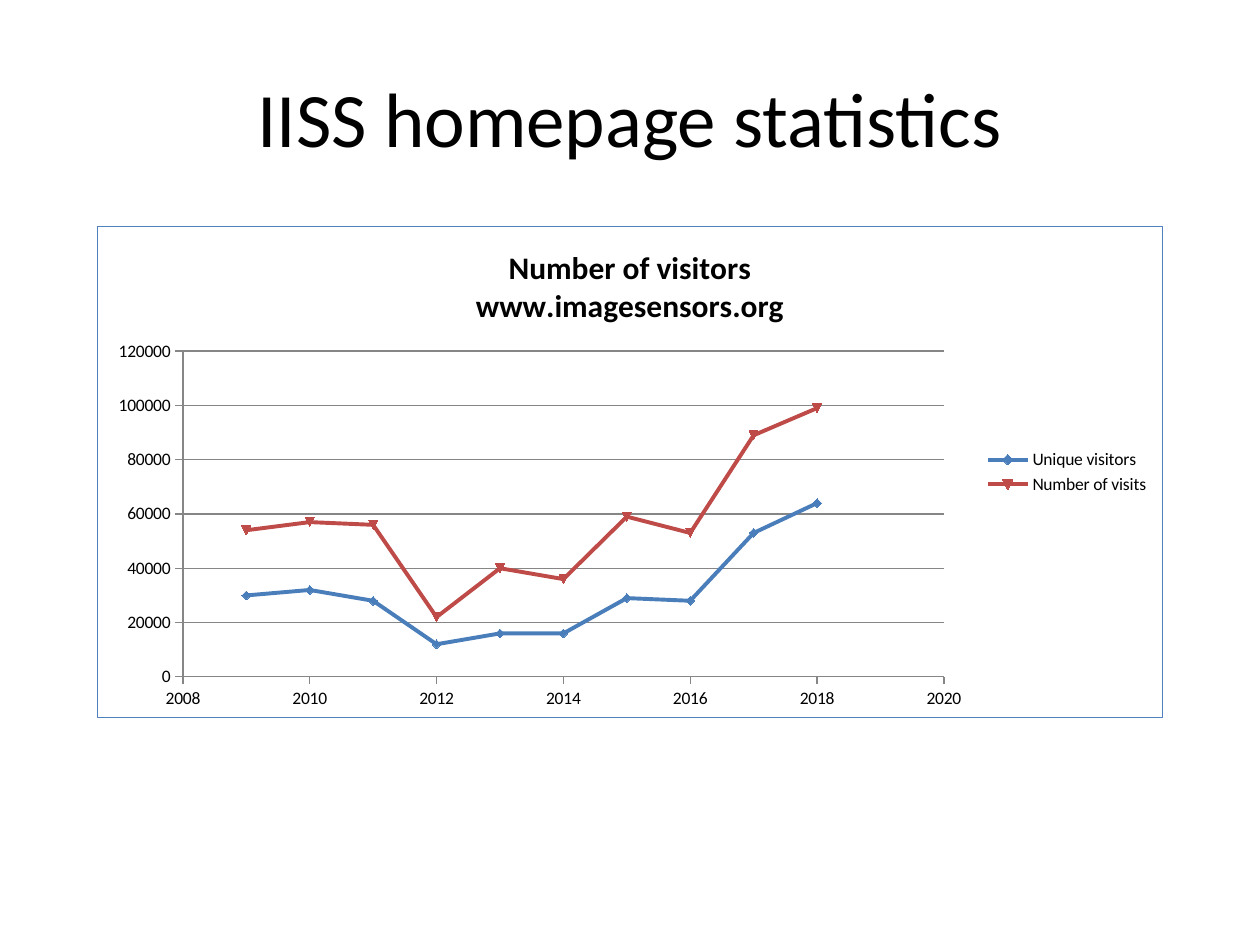
from pptx import Presentation
from pptx.chart.data import XyChartData
from pptx.dml.color import RGBColor
from pptx.enum.chart import XL_CHART_TYPE, XL_LEGEND_POSITION, XL_TICK_MARK
from pptx.enum.text import MSO_ANCHOR, PP_ALIGN
from pptx.oxml import parse_xml
from pptx.oxml.ns import nsdecls, qn
from pptx.util import Pt

SCATTER_LINES = XL_CHART_TYPE.XY_SCATTER_LINES
LEGEND_RIGHT = XL_LEGEND_POSITION.RIGHT
TICK_OUTSIDE = XL_TICK_MARK.OUTSIDE
MIDDLE = MSO_ANCHOR.MIDDLE
CENTER = PP_ALIGN.CENTER

BLACK = RGBColor(0x00, 0x00, 0x00)
GRAY = RGBColor(0x86, 0x86, 0x86)
BLUE = RGBColor(0x4F, 0x81, 0xBD)
LINE_BLUE = RGBColor(0x4A, 0x7E, 0xBB)
LINE_RED = RGBColor(0xBE, 0x4B, 0x48)
FONT = "Calibri"

YEARS = range(2009, 2019)
VISITOR_COUNTS = [
    ("Unique visitors", LINE_BLUE,
     [30000, 32000, 28000, 12000, 16000, 16000, 29000, 28000, 53000, 64000]),
    ("Number of visits", LINE_RED,
     [54000, 57000, 56000, 22000, 40000, 36000, 59000, 53000, 89000, 99000]),
]


def style_font(font, size, bold=False):
    font.name = FONT
    font.size = Pt(size)
    font.bold = bold
    font.color.rgb = BLACK


prs = Presentation()
prs.slide_width, prs.slide_height = Pt(720), Pt(540)
slide = prs.slides.add_slide(prs.slide_layouts[6])

# Heading
heading = slide.shapes.add_textbox(Pt(36), Pt(21.6), Pt(648), Pt(90)).text_frame
heading.word_wrap = True
heading.vertical_anchor = MIDDLE
heading.text = "IISS homepage statistics"
heading.paragraphs[0].alignment = CENTER
style_font(heading.paragraphs[0].runs[0].font, 44)

# Visitor chart
visitor_data = XyChartData()
for name, color, counts in VISITOR_COUNTS:
    points = visitor_data.add_series(name)
    for year, count in zip(YEARS, counts):
        points.add_data_point(year, count)
chart = slide.shapes.add_chart(SCATTER_LINES, Pt(55.5), Pt(129), Pt(609),
                               Pt(281.5), visitor_data).chart
style_font(chart.font, 10)

chart.has_title = True
chart_title = chart.chart_title.text_frame
chart_title.text = "Number of visitors\nwww.imagesensors.org"
for line in chart_title.paragraphs:
    style_font(line.runs[0].font, 18, bold=True)
chart.chart_title.include_in_layout = False

chart.has_legend = True
chart.legend.position = LEGEND_RIGHT
chart.legend.include_in_layout = False

# Axes
for axis, low, high, step in [(chart.category_axis, 2008, 2020, 2),
                              (chart.value_axis, 0, 120000, 20000)]:
    axis.minimum_scale, axis.maximum_scale, axis.major_unit = low, high, step
    axis.major_tick_mark = TICK_OUTSIDE
    axis.tick_labels.number_format = "General"
    axis.tick_labels.number_format_is_linked = False
    axis.format.line.color.rgb = GRAY
    axis.format.line.width = Pt(0.75)
chart.category_axis.has_major_gridlines = False
chart.value_axis.has_major_gridlines = True
gridline = chart.value_axis.major_gridlines.format.line
gridline.color.rgb = GRAY
gridline.width = Pt(0.75)

# Series lines; automatic markers follow the index: diamond, then triangle
chart.plots[0].vary_by_categories = False
for series, (name, color, counts) in zip(chart.plots[0].series, VISITOR_COUNTS):
    series.smooth = False
    series.format.line.color.rgb = color
    series.format.line.width = Pt(2.25)
for index, series_xml in enumerate(chart.element.iter(qn("c:ser")), start=1):
    series_xml.find(qn("c:idx")).set("val", str(index))

# Plot area position, as fractions of the chart
PLOT_LEFT, PLOT_TOP, PLOT_WIDTH, PLOT_HEIGHT = 0.08, 0.254, 0.715, 0.663
plot_area = chart.element.find(".//" + qn("c:plotArea"))
for layout in plot_area.findall(qn("c:layout")):
    plot_area.remove(layout)
plot_area.insert(0, parse_xml(
    f'<c:layout {nsdecls("c")}><c:manualLayout><c:layoutTarget val="inner"/>'
    f'<c:xMode val="edge"/><c:yMode val="edge"/><c:x val="{PLOT_LEFT}"/>'
    f'<c:y val="{PLOT_TOP}"/><c:w val="{PLOT_WIDTH}"/>'
    f'<c:h val="{PLOT_HEIGHT}"/></c:manualLayout></c:layout>'))

# Chart border
chart.element.find(qn("c:chart")).addnext(parse_xml(
    f'<c:spPr {nsdecls("c", "a")}><a:noFill/><a:ln w="{Pt(0.75)}"><a:solidFill>'
    f'<a:srgbClr val="{BLUE}"/></a:solidFill></a:ln></c:spPr>'))

prs.save("out.pptx")
